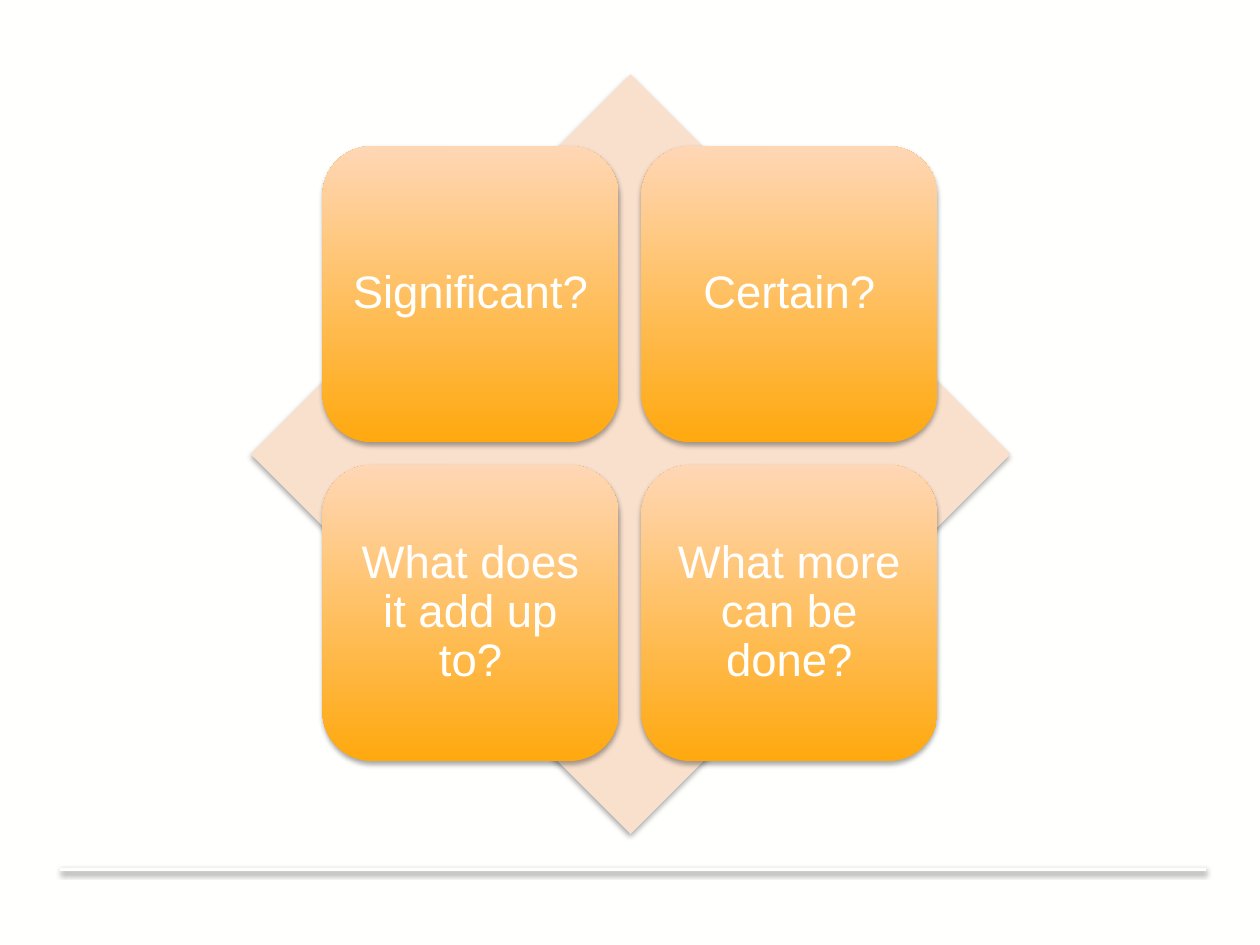
from lxml.etree import SubElement
from pptx import Presentation
from pptx.dml.color import RGBColor
from pptx.enum.shapes import MSO_CONNECTOR, MSO_SHAPE
from pptx.enum.text import MSO_ANCHOR, PP_ALIGN
from pptx.oxml.ns import qn
from pptx.util import Emu, Pt

PX = 9144  # 100 px to the inch
COLORS = {
    "paper": "FFFFFE",
    "rule": "FFFFFF",
    "diamond": "F8E0CD",
    "tile_bottom": "FFA90F",
    "tile_top": "FFD7B5",
    "shadow": "000000",
}
QUESTIONS = [
    "Significant?",
    "Certain?",
    "What does it add up to?",
    "What more can be done?",
]


def px(n):
    return Emu(n * PX)


def rgb(name):
    return RGBColor.from_string(COLORS[name])


def add_shadow(s, distance, alpha):
    """Drop a soft shadow straight below a shape or connector."""
    effects = s._element.spPr.find(qn("a:effectLst"))
    if effects is None:
        effects = SubElement(s._element.spPr, qn("a:effectLst"))
    shadow = SubElement(effects, qn("a:outerShdw"), blurRad=str(Pt(3.1)),
                        dist=str(Pt(distance)), dir="5400000", rotWithShape="0")
    color = SubElement(shadow, qn("a:srgbClr"), val=COLORS["shadow"])
    SubElement(color, qn("a:alpha"), val=str(alpha * 1000))


def add_block(slide, kind, x, y, size):
    """Add a square preset shape with no outline and a shadow."""
    sp = slide.shapes.add_shape(kind, px(x), px(y), px(size), px(size))
    sp.line.fill.background()
    sp.shadow.inherit = False
    add_shadow(sp, 1.8, 35)
    return sp


def set_text(sp, text, *, size, color, font="Arial", inset=11, spacing=0.9):
    tf = sp.text_frame
    tf.word_wrap = True
    tf.vertical_anchor = MSO_ANCHOR.MIDDLE
    tf.margin_left = tf.margin_right = tf.margin_top = tf.margin_bottom = px(inset)
    p = tf.paragraphs[0]
    p.alignment = PP_ALIGN.CENTER
    p.line_spacing = spacing
    r = p.add_run()
    r.text = text
    r.font.name = font
    r.font.size = Pt(size)
    r.font.color.rgb = rgb(color)


def add_tile(slide, x, y, size, text):
    sp = add_block(slide, MSO_SHAPE.ROUNDED_RECTANGLE, x, y, size)
    sp.fill.gradient()
    sp.fill.gradient_angle = 90
    for stop, name in zip(sp.fill.gradient_stops, ("tile_bottom", "tile_top")):
        stop.color.rgb = rgb(name)
    set_text(sp, text, size=26, color="paper")


def add_matrix(slide, x, y, size, questions):
    """Place a diamond with a two-by-two grid of tiles centred on it."""
    diamond = add_block(slide, MSO_SHAPE.DIAMOND, x, y, size)
    diamond.fill.solid()
    diamond.fill.fore_color.rgb = rgb("diamond")
    margin, tile, step = 57, 235, 253
    for i, question in enumerate(questions):
        row, col = divmod(i, 2)
        add_tile(slide, x + margin + col * step, y + margin + row * step, tile, question)


def add_rule(slide, x, y, width):
    line = slide.shapes.add_connector(MSO_CONNECTOR.STRAIGHT,
                                      px(x), px(y), px(x + width), px(y))
    line.line.color.rgb = rgb("rule")
    line.line.width = Pt(2)
    add_shadow(line, 1.6, 38)


def main():
    prs = Presentation()
    prs.slide_width, prs.slide_height = px(1000), px(750)
    slide = prs.slides.add_slide(prs.slide_layouts[6])
    slide.background.fill.solid()
    slide.background.fill.fore_color.rgb = rgb("paper")
    add_rule(slide, 48, 690, 909)
    add_matrix(slide, 199, 59, 603, QUESTIONS)
    prs.save("out.pptx")


if __name__ == "__main__":
    main()
